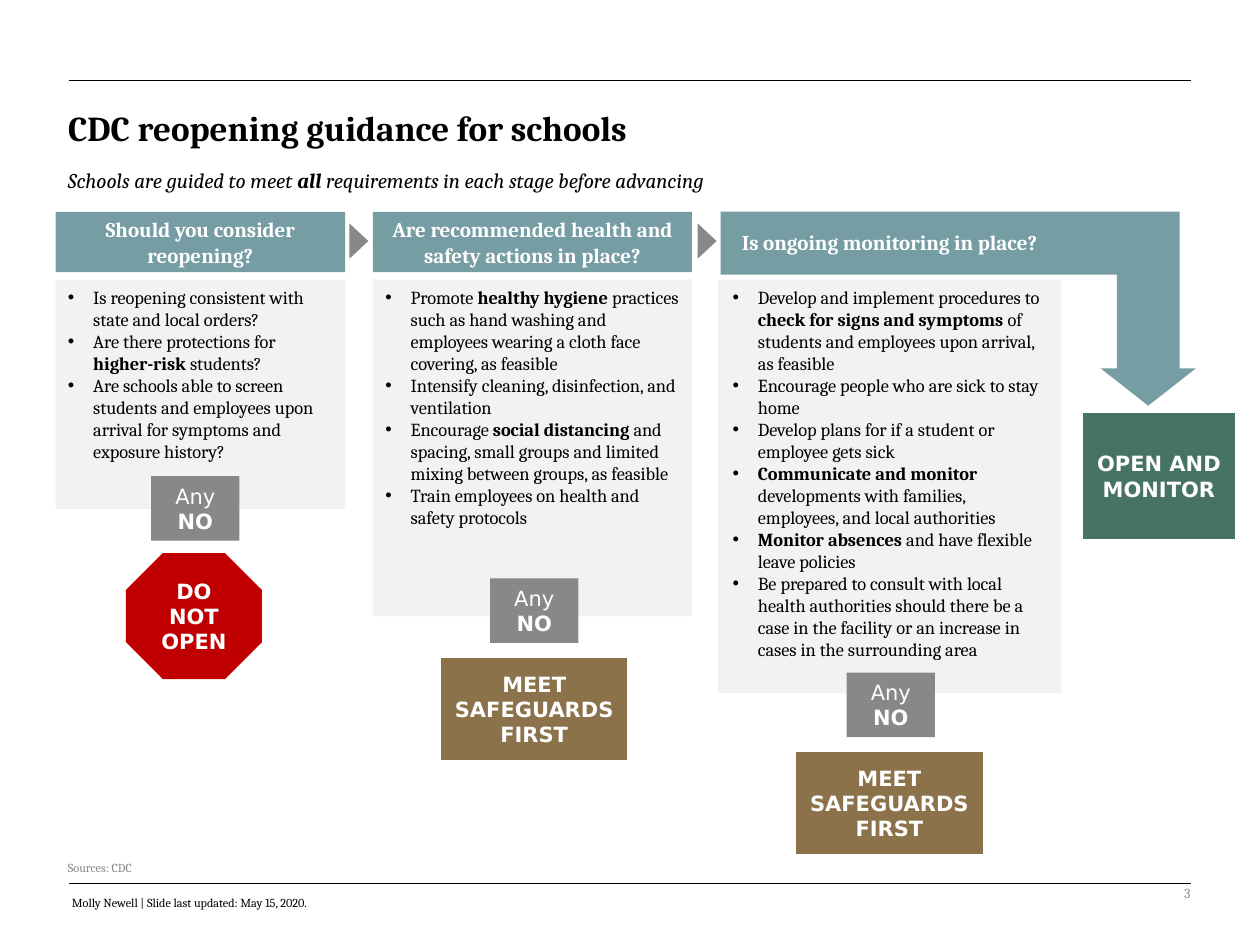
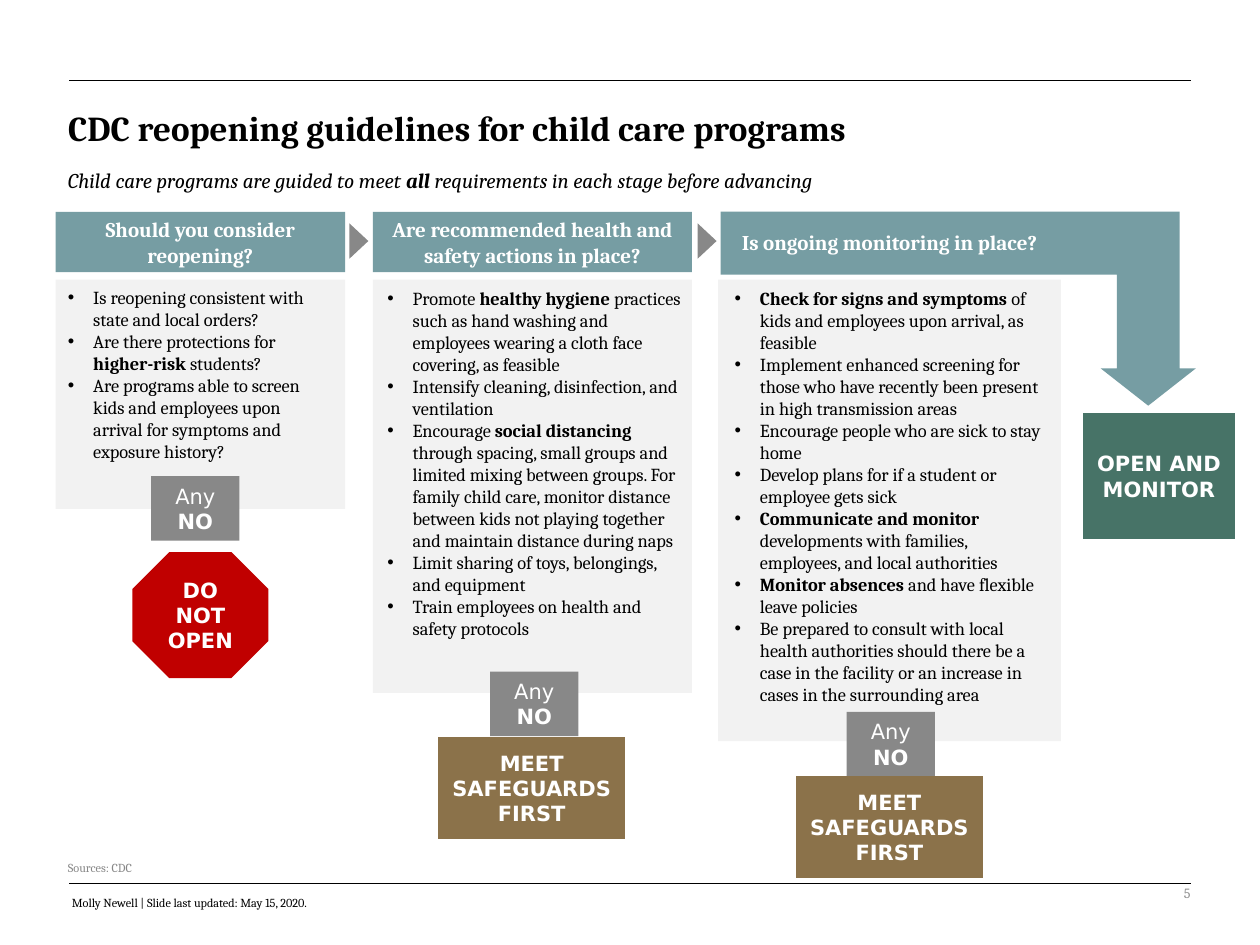
from lxml.etree import SubElement
from pptx import Presentation
from pptx.dml.color import RGBColor
from pptx.enum.shapes import MSO_CONNECTOR, MSO_SHAPE
from pptx.enum.text import MSO_ANCHOR, MSO_AUTO_SIZE, PP_ALIGN
from pptx.oxml.ns import qn
from pptx.util import Cm, Pt

COLORS = {
    "black": "000000", "white": "FFFFFF", "teal": "769DA3", "panel": "F2F2F2",
    "gray": "888888", "number": "8C8C8C", "red": "C00000", "brown": "8B724A",
    "green": "477367",
}
SERIF, SANS = "Cambria", "DejaVu Sans"

# Columns: left, width, header, middle of the "Any NO" tag, verdict
COLUMNS = [
    (1.12, 5.84, "Should you consider reopening?", 3.94, "DO NOT OPEN"),
    (7.52, 6.43, "Are recommended health and safety actions in place?", 10.77,
     "MEET SAFEGUARDS FIRST"),
    (14.48, 6.91, "Is ongoing monitoring in place?", 17.96, "MEET SAFEGUARDS FIRST"),
]
VERDICTS = {
    "DO NOT OPEN": (MSO_SHAPE.OCTAGON, "red", 2.74, 2.54),
    "MEET SAFEGUARDS FIRST": (MSO_SHAPE.FLOWCHART_PROCESS, "brown", 3.76, 2.06),
}
HEADER_TOP, HEADER_HEIGHT, PANEL_TOP = 4.27, 1.22, 5.64
TAG_WIDTH, TAG_HEIGHT = 1.78, 1.3

HYGIENE = ("Promote **healthy hygiene **practices such as hand washing and employees "
           "wearing a cloth face covering, as feasible")
CLEANING = "Intensify cleaning, disinfection, and ventilation"
TRAINING = "Train employees on health and safety protocols"
ORDERS = [
    "Is reopening consistent with state and local orders?",
    "Are there protections for **higher-risk** students?",
]
SICKNESS_PLANS = [
    "Encourage people who are sick to stay home",
    "Develop plans for if a student or employee gets sick",
    "**Communicate and monitor **developments with families, employees, and local authorities",
    "**Monitor absences **and have flexible leave policies",
    "Be prepared to consult with local health authorities should there be a case in the "
    "facility or an increase in cases in the surrounding area",
]

# Stages: panel height, tag top, verdict left and top, bullet box shift, bullets
PAGES = [
    {
        "title": "CDC reopening guidance for schools",
        "audience": "Schools",
        "number": "3",
        "stages": [
            (4.62, 9.6, (2.54, 11.15), (0, 0), ORDERS + [
                "Are schools able to screen students and employees upon arrival for "
                "symptoms and exposure history?"]),
            (6.78, 11.66, (8.89, 13.26), (0, 0), [
                HYGIENE, CLEANING,
                "Encourage **social distancing **and spacing, small groups and limited "
                "mixing between groups, as feasible",
                TRAINING]),
            (8.33, 13.56, (16.05, 15.16), (0.04, 0), [
                "Develop and implement procedures to **check for signs and symptoms **of "
                "students and employees upon arrival, as feasible"] + SICKNESS_PLANS),
        ],
    },
    {
        "title": "CDC reopening guidelines for child care programs",
        "audience": "Child care programs",
        "number": "5",
        "stages": [
            (4.62, 9.6, (2.67, 11.13), (0, 0), ORDERS + [
                "Are programs able to screen kids and employees upon arrival for "
                "symptoms and exposure history?"]),
            (8.33, 13.54, (8.84, 14.86), (0.04, 0.02), [
                HYGIENE, CLEANING,
                "Encourage **social distancing **through spacing, small groups and limited "
                "mixing between groups. For family child care, monitor distance between "
                "kids not playing together and maintain distance during naps",
                "Limit sharing of toys, belongings, and equipment",
                TRAINING]),
            (9.3, 14.35, (16.05, 15.65), (0.08, 0.02), [
                "**Check for signs and symptoms **of kids and employees upon arrival, "
                "as feasible",
                "Implement enhanced screening for those who have recently been present in "
                "high transmission areas"] + SICKNESS_PLANS),
        ],
    },
]


def add_block(page, kind, left, top, width, height, fill=None):
    """Add a flat preset shape, or a text box when kind is None."""
    frame = Cm(left), Cm(top), Cm(width), Cm(height)
    if kind is None:
        return page.shapes.add_textbox(*frame)
    block = page.shapes.add_shape(kind, *frame)
    block.shadow.inherit = False
    block.fill.solid()
    block.fill.fore_color.rgb = RGBColor.from_string(COLORS[fill])
    block.line.fill.background()
    return block


def write(box, lines, size, color="black", font=SERIF, align=PP_ALIGN.LEFT,
          anchor=MSO_ANCHOR.TOP, italic=False, bullets=False):
    """Fill a box with one paragraph per line; **marks** set bold spans."""
    frame = box.text_frame
    frame.word_wrap = True
    frame.auto_size = MSO_AUTO_SIZE.NONE
    frame.vertical_anchor = anchor
    for index, line in enumerate(lines):
        paragraph = frame.add_paragraph() if index else frame.paragraphs[0]
        paragraph.alignment = align
        if bullets:
            properties = paragraph._p.get_or_add_pPr()
            properties.set("marL", str(Cm(0.51)))
            properties.set("indent", str(-Cm(0.51)))
            SubElement(properties, qn("a:buFont")).set("typeface", "Arial")
            SubElement(properties, qn("a:buChar")).set("char", "•")
        for part, text in enumerate(line.split("**")):
            if text:
                span = paragraph.add_run()
                span.text = text
                span.font.name = font
                span.font.size = Pt(size)
                span.font.bold = part % 2 == 1
                span.font.italic = italic
                span.font.color.rgb = RGBColor.from_string(COLORS[color])


deck = Presentation()
deck.slide_width, deck.slide_height = Cm(25.4), Cm(19.05)
label_style = {"size": 12, "color": "white", "align": PP_ALIGN.CENTER,
               "anchor": MSO_ANCHOR.MIDDLE}

for content in PAGES:
    page = deck.slides.add_slide(deck.slide_layouts[5])

    for rule_top in (17.81, 1.63):
        rule = page.shapes.add_connector(
            MSO_CONNECTOR.STRAIGHT, Cm(1.4), Cm(rule_top), Cm(24), Cm(rule_top))
        rule.line.color.rgb = RGBColor.from_string(COLORS["black"])
        rule.line.width = Pt(0.5)
        SubElement(rule._element.spPr, qn("a:effectLst"))

    title = page.shapes.title
    title.left, title.top, title.width, title.height = Cm(1.12), Cm(2.11), Cm(23.37), Cm(1.78)
    write(title, [f"**{content['title']}**"], 20)
    title.text_frame.paragraphs[0].line_spacing = 0.9

    subtitle = add_block(page, None, 1.12, 3.25, 21.41, 0.76)
    write(subtitle, [f"{content['audience']} are guided to meet **all **requirements "
                     "in each stage before advancing"], 12, italic=True)

    for column, stage in zip(COLUMNS, content["stages"]):
        left, width, question, tag_middle, verdict_text = column
        panel_height, tag_top, verdict_place, (shift_x, shift_y), bullets = stage

        if column is COLUMNS[-1]:
            arrow = add_block(page, MSO_SHAPE.BENT_UP_ARROW, 14.53, HEADER_TOP, 9.58, 3.91, "teal")
            arrow._element.spPr.xfrm.set("flipV", "1")
            for index, value in enumerate((0.324, 0.246, 0.193)):
                arrow.adjustments[index] = value
            header = add_block(page, None, left, HEADER_TOP, width, HEADER_HEIGHT)
        else:
            header = add_block(page, MSO_SHAPE.RECTANGLE, left, HEADER_TOP, width,
                               HEADER_HEIGHT, "teal")
        write(header, [f"**{question}**"], **label_style)

        add_block(page, MSO_SHAPE.RECTANGLE, left, PANEL_TOP, width, panel_height, "panel")
        checklist = add_block(page, None, left + shift_x, PANEL_TOP + shift_y,
                              min(width, 6.88) if left > 2 else 5.59, panel_height - 0.5)
        write(checklist, bullets, 10.5, bullets=True)

        tag = add_block(page, MSO_SHAPE.RECTANGLE, tag_middle - TAG_WIDTH / 2, tag_top,
                        TAG_WIDTH, TAG_HEIGHT, "gray")
        write(tag, ["Any **NO**"], font=SANS, **label_style)

        kind, fill, verdict_width, verdict_height = VERDICTS[verdict_text]
        verdict = add_block(page, kind, *verdict_place, verdict_width, verdict_height, fill)
        write(verdict, [f"**{verdict_text}**"], font=SANS, **label_style)

    outcome = add_block(page, MSO_SHAPE.FLOWCHART_PROCESS, 21.84, 8.33, 3.05, 2.54, "green")
    write(outcome, ["**OPEN AND MONITOR**"], font=SANS, **label_style)

    for pointer_left in (6.88, 13.9):
        pointer = add_block(page, MSO_SHAPE.ISOSCELES_TRIANGLE, pointer_left, 4.67,
                            0.71, 0.38, "gray")
        pointer.rotation = 90

    sources = add_block(page, None, 1.12, 17.22, 8.13, 0.56)
    write(sources, ["Sources: CDC"], 7, "gray")
    footer = add_block(page, None, 1.2, 17.93, 7.24, 0.56)
    write(footer, ["Molly Newell | Slide last updated: May 15, 2020."], 7)
    number = add_block(page, None, 17.93, 17.5, 6.32, 1.02)
    write(number, [content["number"]], 8, "number", align=PP_ALIGN.RIGHT,
          anchor=MSO_ANCHOR.MIDDLE)

deck.save("out.pptx")
